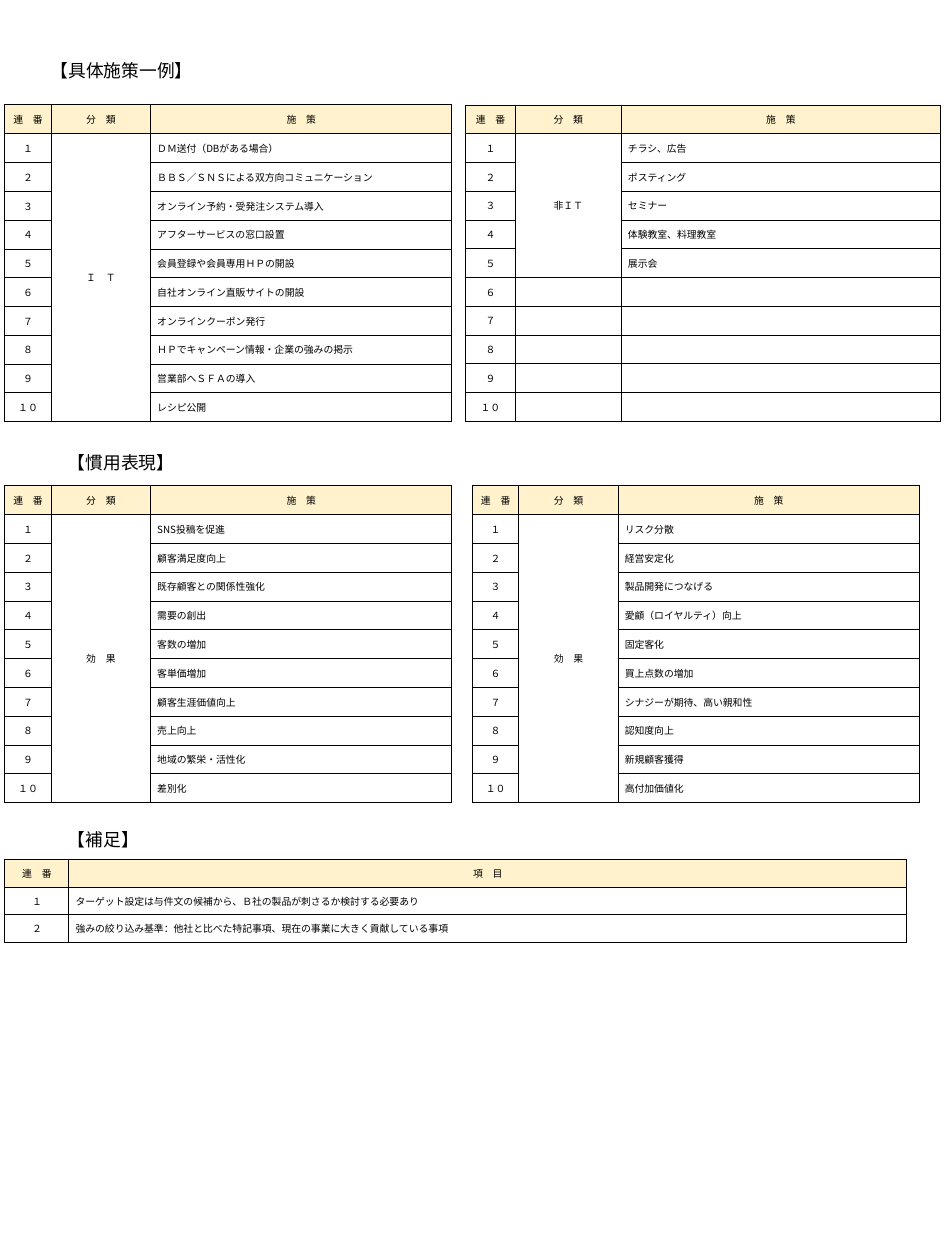
import pptx
import pptx.dml.color
import pptx.enum.text
import pptx.oxml
import pptx.oxml.ns
import pptx.util

BLACK = pptx.dml.color.RGBColor(0x00, 0x00, 0x00)
WHITE = pptx.dml.color.RGBColor(0xFF, 0xFF, 0xFF)
CREAM = pptx.dml.color.RGBColor(0xFF, 0xF2, 0xCC)
JAPANESE_FONT = "Noto Sans CJK JP"
LATIN_FONT = "Calibri"
CENTER = pptx.enum.text.PP_ALIGN.CENTER
LEFT = pptx.enum.text.PP_ALIGN.LEFT
FULL_WIDTH_DIGITS = str.maketrans("0123456789", "０１２３４５６７８９")
MEASURE_HEADER = ["連　番", "分　類", "施　策"]
NOTE_HEADER = ["連　番", "項　目"]
NARROW_COLUMNS = [47, 101, 306]
WIDE_COLUMNS = [50.5, 107.75, 324.25]
ROW_HEIGHT = 29.25

ONLINE_MEASURES = [
    "ＤＭ送付（DBがある場合）",
    "ＢＢＳ／ＳＮＳによる双方向コミュニケーション",
    "オンライン予約・受発注システム導入",
    "アフターサービスの窓口設置",
    "会員登録や会員専用ＨＰの開設",
    "自社オンライン直販サイトの開設",
    "オンラインクーポン発行",
    "ＨＰでキャンペーン情報・企業の強みの掲示",
    "営業部へＳＦＡの導入",
    "レシピ公開",
]
OFFLINE_MEASURES = ["チラシ、広告", "ポスティング", "セミナー", "体験教室、料理教室", "展示会"]
CUSTOMER_EFFECTS = [
    "SNS投稿を促進",
    "顧客満足度向上",
    "既存顧客との関係性強化",
    "需要の創出",
    "客数の増加",
    "客単価増加",
    "顧客生涯価値向上",
    "売上向上",
    "地域の繁栄・活性化",
    "差別化",
]
BUSINESS_EFFECTS = [
    "リスク分散",
    "経営安定化",
    "製品開発につなげる",
    "愛顧（ロイヤルティ）向上",
    "固定客化",
    "買上点数の増加",
    "シナジーが期待、高い親和性",
    "認知度向上",
    "新規顧客獲得",
    "高付加価値化",
]
NOTES = [
    "ターゲット設定は与件文の候補から、Ｂ社の製品が刺さるか検討する必要あり",
    "強みの絞り込み基準：他社と比べた特記事項、現在の事業に大きく貢献している事項",
]


def apply_format(target, values):
    """Set each attribute of the target from a dict."""
    for name, value in values.items():
        setattr(target, name, value)


class SheetBuilder:
    """Draw headings and ruled tables on one page in a shared style."""

    heading_font = {"name": LATIN_FONT, "size": pptx.util.Pt(18)}
    cell_font = {"name": JAPANESE_FONT, "size": pptx.util.Pt(10)}
    cell_format = {
        "vertical_anchor": pptx.enum.text.MSO_ANCHOR.MIDDLE,
        "margin_left": pptx.util.Pt(6.75),
        "margin_right": pptx.util.Pt(6.75),
        "margin_top": 0,
        "margin_bottom": 0,
    }
    box_format = {
        "word_wrap": True,
        "auto_size": pptx.enum.text.MSO_AUTO_SIZE.SHAPE_TO_FIT_TEXT,
    }

    def __init__(self, page):
        """Keep the page to draw on."""
        self.page = page

    def add_span(self, para, text, font, align=LEFT):
        """Add one span with Latin and East Asian fonts."""
        para.alignment = align
        span = para.add_run()
        span.text = text
        apply_format(span.font, font)
        span.font.color.rgb = BLACK
        east_asian = pptx.oxml.parse_xml(
            f'<a:ea {pptx.oxml.ns.nsdecls("a")} typeface="{JAPANESE_FONT}"/>'
        )
        span.font._element.append(east_asian)

    def heading(self, text, left, top):
        """Add a section heading."""
        box = self.page.shapes.add_textbox(
            *map(pptx.util.Pt, (left, top, 340, 29))
        )
        apply_format(box.text_frame, self.box_format)
        self.add_span(box.text_frame.paragraphs[0], text, self.heading_font)

    def style_cell(self, cell, fill):
        """Rule a cell on all four sides and fill it."""
        apply_format(cell, self.cell_format)
        properties = cell._tc.get_or_add_tcPr()
        for side in ("lnL", "lnR", "lnT", "lnB"):
            properties.append(pptx.oxml.parse_xml(
                f'<a:{side} {pptx.oxml.ns.nsdecls("a")} w="12700">'
                f'<a:solidFill><a:srgbClr val="{BLACK}"/></a:solidFill></a:{side}>'
            ))
        cell.fill.solid()
        cell.fill.fore_color.rgb = fill

    def table(self, left, top, columns, heights, header, items, category=None):
        """Add a numbered table whose category cell spans its items."""
        frame = self.page.shapes.add_table(
            len(heights), len(columns),
            *map(pptx.util.Pt, (left, top, sum(columns), sum(heights)))
        )
        table = frame.table
        apply_format(table, {"first_row": False, "horz_banding": False})
        for column, width in zip(table.columns, columns):
            column.width = pptx.util.Pt(width)
        for row, height in zip(table.rows, heights):
            row.height = pptx.util.Pt(height)

        texts = {(0, index): title for index, title in enumerate(header)}
        for number in range(1, len(heights)):
            texts[number, 0] = str(number).translate(FULL_WIDTH_DIGITS)
        last = len(columns) - 1
        for number, item in enumerate(items, 1):
            texts[number, last] = item
        if category:
            texts[1, 1] = category
            table.cell(1, 1).merge(table.cell(len(items), 1))

        for row in range(len(heights)):
            for column in range(len(columns)):
                cell = table.cell(row, column)
                self.style_cell(cell, WHITE if row else CREAM)
                if (row, column) in texts:
                    align = LEFT if row and column == last else CENTER
                    para = cell.text_frame.paragraphs[0]
                    self.add_span(para, texts[row, column], self.cell_font, align)


def main():
    """Build the page of measures, effects and notes."""
    deck = pptx.Presentation()
    deck.slide_width = pptx.util.Pt(960)
    deck.slide_height = pptx.util.Pt(1280)
    sheet = SheetBuilder(deck.slides.add_slide(deck.slide_layouts[6]))

    for text, left, top in (
        ("【具体施策一例】", 44.5, 57.5),
        ("【慣用表現】", 62, 455.75),
        ("【補足】", 62, 838),
    ):
        sheet.heading(text, left, top)

    for left, top, columns, header_height, items, category in (
        (5, 106, NARROW_COLUMNS, 30, ONLINE_MEASURES, "Ｉ　Ｔ"),
        (473, 106.75, WIDE_COLUMNS, 29, OFFLINE_MEASURES, "非ＩＴ"),
        (5, 493, NARROW_COLUMNS, 30, CUSTOMER_EFFECTS, "効　果"),
        (480, 493, NARROW_COLUMNS, 30, BUSINESS_EFFECTS, "効　果"),
    ):
        heights = [header_height] + [ROW_HEIGHT] * 10
        sheet.table(left, top, columns, heights, MEASURE_HEADER, items, category)

    sheet.table(5, 873, [65, 851], [29, 26.5, 29.25], NOTE_HEADER, NOTES)
    deck.save("out.pptx")


if __name__ == "__main__":
    main()
